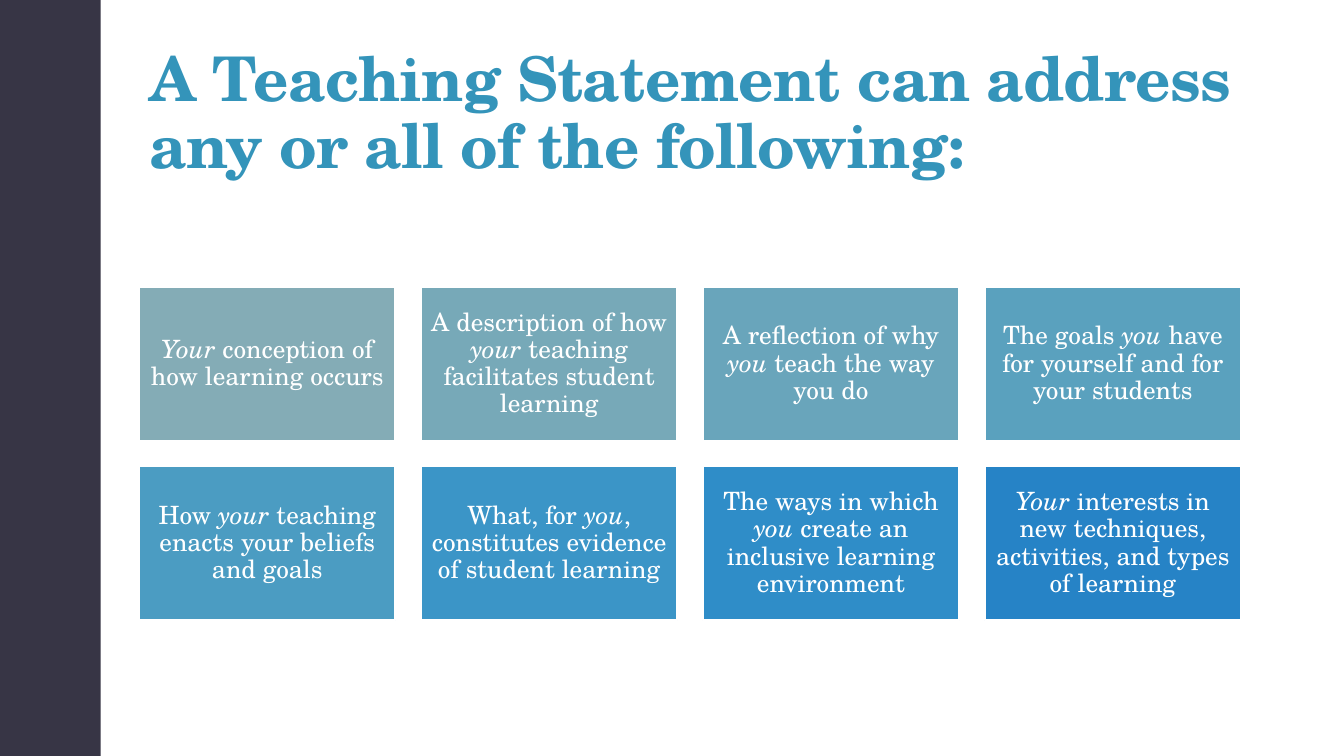
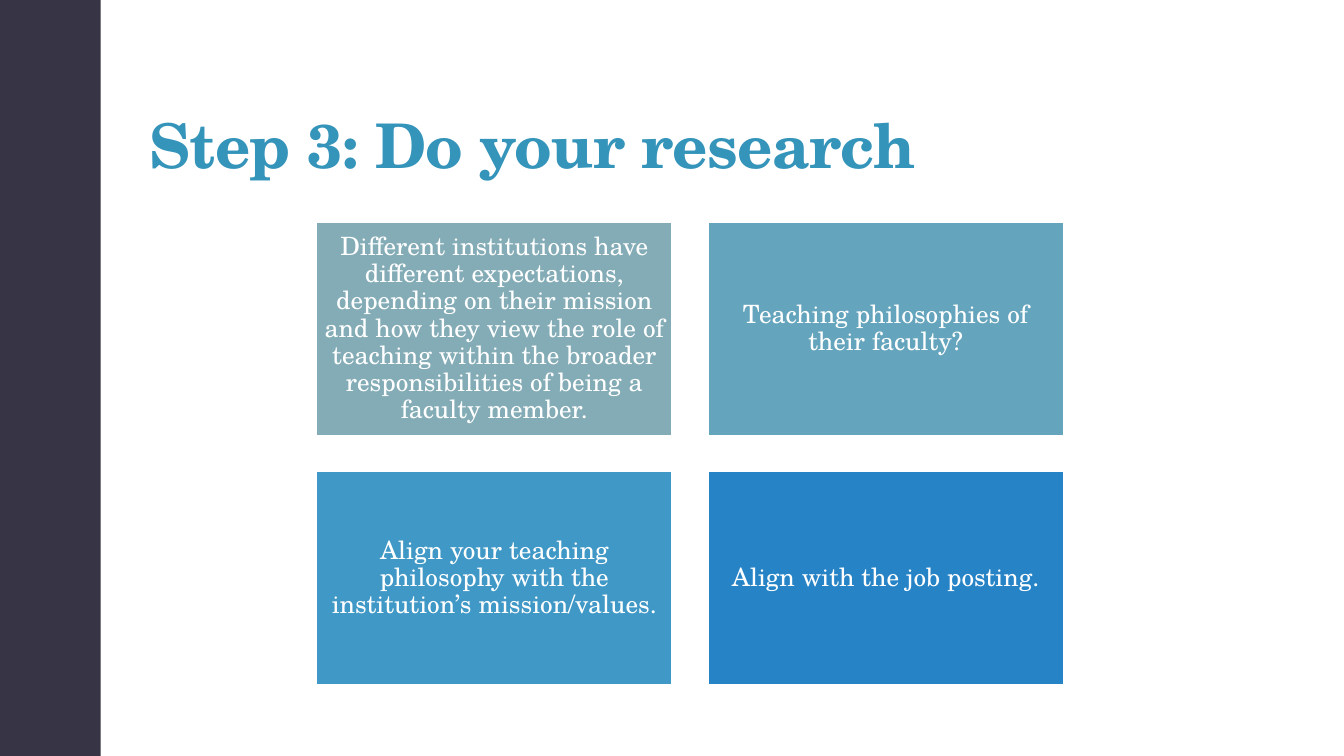
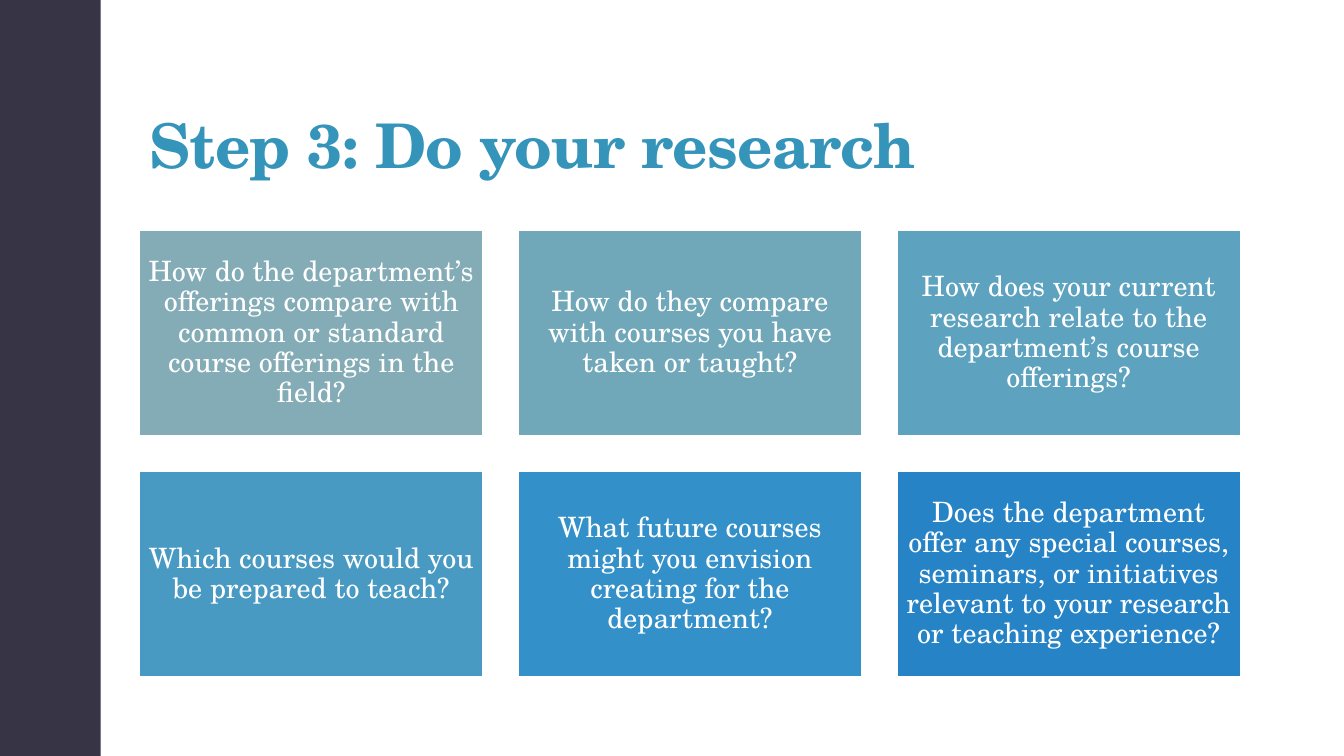
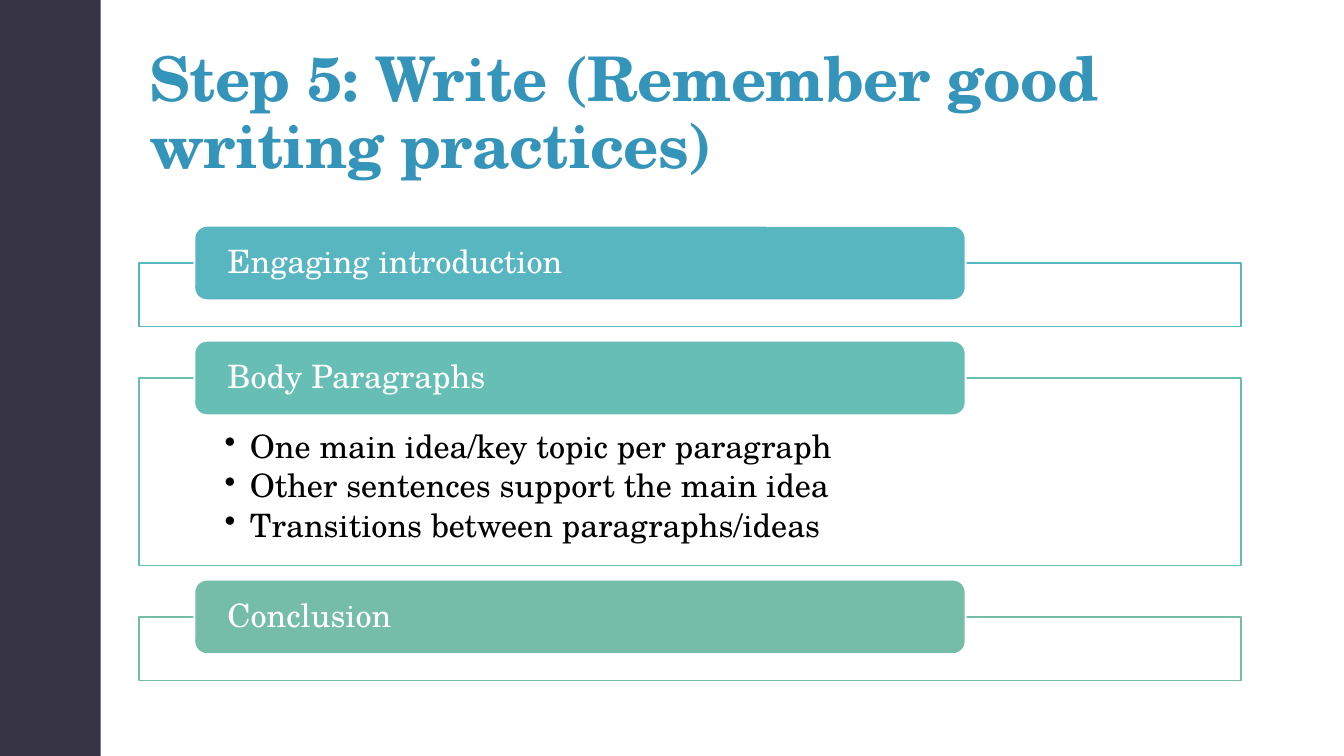
from dataclasses import dataclass

import pptx
import pptx.dml.color
import pptx.enum.shapes
import pptx.enum.text
import pptx.oxml
import pptx.oxml.ns
import pptx.util
from lxml import etree

Pt = pptx.util.Pt
Shapes = pptx.enum.shapes.MSO_SHAPE
Align = pptx.enum.text.PP_ALIGN
Anchor = pptx.enum.text.MSO_ANCHOR
qn = pptx.oxml.ns.qn

# Shared look
FONT = "TeX Gyre Schola"
WHITE, BLACK, BAR, TITLE = "FFFFFF", "000000", "373545", "3494BA"
SLIDE_WIDTH, SLIDE_HEIGHT = 960, 540
CONTENT_LEFT, CONTENT_WIDTH = 99.4, 787
GRID_CENTER_Y = 324
LINE_SPACING = 0.9


@dataclass(frozen=True)
class Box:
    left: float
    top: float
    width: float
    height: float


@dataclass(frozen=True)
class Card:
    text: str  # *asterisks* enclose italics
    fill: str


@dataclass(frozen=True)
class CardSlide:
    title: str
    columns: int
    width: float
    size: float
    cards: tuple[Card, ...]


@dataclass(frozen=True)
class Section:
    heading: str
    color: str
    height: float
    bullets: tuple[str, ...] = ()


CARD_SLIDES = (
    CardSlide("A Teaching Statement can address any or all of the following:", 4, CONTENT_WIDTH, 18, (
        Card("*Your* conception of how learning occurs", "84ACB6"),
        Card("A description of how *your* teaching facilitates student learning", "77A9B8"),
        Card("A reflection of why *you* teach the way you do", "69A5BB"),
        Card("The goals *you* have for yourself and for your students", "5AA1BE"),
        Card("How *your* teaching enacts your beliefs and goals", "4B9CC2"),
        Card("What, for *you*, constitutes evidence of student learning", "3B95C7"),
        Card("The ways in which *you* create an inclusive learning environment", "2F8DC8"),
        Card("*Your* interests in new techniques, activities, and types of learning", "2683C6"),
    )),
    CardSlide("Step 3: Do your research", 2, 533.6, 18, (
        Card("Different institutions have different expectations, depending on their mission and how "
             "they view the role of teaching within the broader responsibilities of being a faculty "
             "member.", "84ACB6"),
        Card("Teaching philosophies of their faculty?", "64A4BC"),
        Card("Align your teaching philosophy with the institution’s mission/values.", "4098C6"),
        Card("Align with the job posting.", "2683C6"),
    )),
    CardSlide("Step 3: Do your research", 3, CONTENT_WIDTH, 20, (
        Card("How do the department’s offerings compare with common or standard course offerings "
             "in the field?", "84ACB6"),
        Card("How do they compare with courses you have taken or taught?", "71A8B9"),
        Card("How does your current research relate to the department’s course offerings?", "5DA2BE"),
        Card("Which courses would you be prepared to teach?", "489AC3"),
        Card("What future courses might you envision creating for the department?", "3390C8"),
        Card("Does the department offer any special courses, seminars, or initiatives relevant to "
             "your research or teaching experience?", "2683C6"),
    )),
)

SECTIONS = (
    Section("Engaging introduction", "58B6C0", 45.4),
    Section("Body Paragraphs", "67BEB5", 133.9, (
        "One main idea/key topic per paragraph",
        "Other sentences support the main idea",
        "Transitions between paragraphs/ideas",
    )),
    Section("Conclusion", "75BDA7", 45.4),
)


# Helpers
def rgb(color: str) -> pptx.dml.color.RGBColor:
    return pptx.dml.color.RGBColor.from_string(color)


def add_box(slide, kind, box: Box, fill: str, line: str | None = None, line_width: float = 1.35):
    shape = slide.shapes.add_shape(kind, Pt(box.left), Pt(box.top), Pt(box.width), Pt(box.height))
    shape.shadow.inherit = False
    shape.fill.solid()
    shape.fill.fore_color.rgb = rgb(fill)
    if line:
        shape.line.color.rgb = rgb(line)
        shape.line.width = Pt(line_width)
    else:
        shape.line.fill.background()
    return shape


def set_frame(shape, anchor, left: float, top: float, right: float, bottom: float):
    frame = shape.text_frame
    frame.word_wrap = True
    frame.vertical_anchor = anchor
    frame.margin_left, frame.margin_top = Pt(left), Pt(top)
    frame.margin_right, frame.margin_bottom = Pt(right), Pt(bottom)
    return frame


def write(paragraph, text: str, size: float, color: str, alignment=Align.LEFT,
          bold: bool = False) -> None:
    paragraph.alignment = alignment
    paragraph.line_spacing = LINE_SPACING
    for index, part in enumerate(text.split("*")):
        if not part:
            continue
        run = paragraph.add_run()
        run.text = part
        run.font.name = FONT
        run.font.size = Pt(size)
        run.font.color.rgb = rgb(color)
        run.font.bold = bold
        run.font.italic = index % 2 == 1


def add_bullet(paragraph, indent: float) -> None:
    properties = paragraph._p.get_or_add_pPr()
    properties.set("marL", str(Pt(indent)))
    properties.set("indent", str(-Pt(indent)))
    etree.SubElement(properties, qn("a:buChar")).set("char", "•")


def set_opacity(shape, percent: int) -> None:
    color = shape.fill._xPr.find(qn("a:solidFill"))[0]
    etree.SubElement(color, qn("a:alpha")).set("val", str(percent * 1000))


# Slide parts
def add_titled_slide(presentation, title: str):
    slide = presentation.slides.add_slide(presentation.slide_layouts[6])
    text_box = slide.shapes.add_textbox(Pt(CONTENT_LEFT), Pt(20.9), Pt(CONTENT_WIDTH), Pt(112.3))
    frame = set_frame(text_box, Anchor.BOTTOM, 7.2, 2.2, 7.2, 3.6)
    write(frame.paragraphs[0], title, 44, TITLE, bold=True)
    for run in frame.paragraphs[0].runs:
        run._r.get_or_add_rPr().set("spc", "-50")
    add_box(slide, Shapes.RECTANGLE, Box(0, 0, 72, SLIDE_HEIGHT), BAR)
    return slide


def add_card_slide(presentation, content: CardSlide) -> None:
    slide = add_titled_slide(presentation, content.title)
    columns = content.columns
    rows = len(content.cards) // columns
    # The gap is a tenth of a card's width, the height six tenths
    width = content.width / (columns + 0.1 * (columns - 1))
    gap, height = 0.1 * width, 0.6 * width
    left = CONTENT_LEFT + (CONTENT_WIDTH - content.width) / 2
    top = GRID_CENTER_Y - (rows * height + (rows - 1) * gap) / 2
    inset = 0.29 * content.size
    for index, card in enumerate(content.cards):
        row, column = divmod(index, columns)
        box = Box(left + column * (width + gap), top + row * (height + gap), width, height)
        shape = add_box(slide, Shapes.RECTANGLE, box, card.fill, WHITE)
        frame = set_frame(shape, Anchor.MIDDLE, inset, inset, inset, inset)
        write(frame.paragraphs[0], card.text, content.size, WHITE, Align.CENTER)


def add_section_slide(presentation, title: str, sections: tuple[Section, ...]) -> None:
    slide = add_titled_slide(presentation, title)
    size, gap, top = 23, 36.7, 187.9
    for section in sections:
        panel_box = Box(CONTENT_LEFT, top, CONTENT_WIDTH, section.height)
        panel = add_box(slide, Shapes.RECTANGLE, panel_box, WHITE, section.color, 1.1)
        set_opacity(panel, 90)
        frame = set_frame(panel, Anchor.TOP, 61.1, 37.5, 61.1, 13)
        for index, text in enumerate(section.bullets):
            paragraph = frame.add_paragraph() if index else frame.paragraphs[0]
            paragraph.level = 1
            write(paragraph, text, size, BLACK)
            paragraph.space_after = Pt(0.15 * size)
            add_bullet(paragraph, 18)

        heading_box = Box(CONTENT_LEFT + 39.4, top - 26.6, 550.9, 53.2)
        heading = add_box(slide, Shapes.ROUNDED_RECTANGLE, heading_box, section.color, WHITE)
        frame = set_frame(heading, Anchor.MIDDLE, 21, 0, 21, 0)
        write(frame.paragraphs[0], section.heading, size, WHITE)
        top += section.height + gap


def main() -> None:
    presentation = pptx.Presentation()
    presentation.slide_width, presentation.slide_height = Pt(SLIDE_WIDTH), Pt(SLIDE_HEIGHT)
    for content in CARD_SLIDES:
        add_card_slide(presentation, content)
    add_section_slide(presentation, "Step 5: Write (Remember good writing practices)", SECTIONS)
    presentation.save("out.pptx")


if __name__ == "__main__":
    main()
